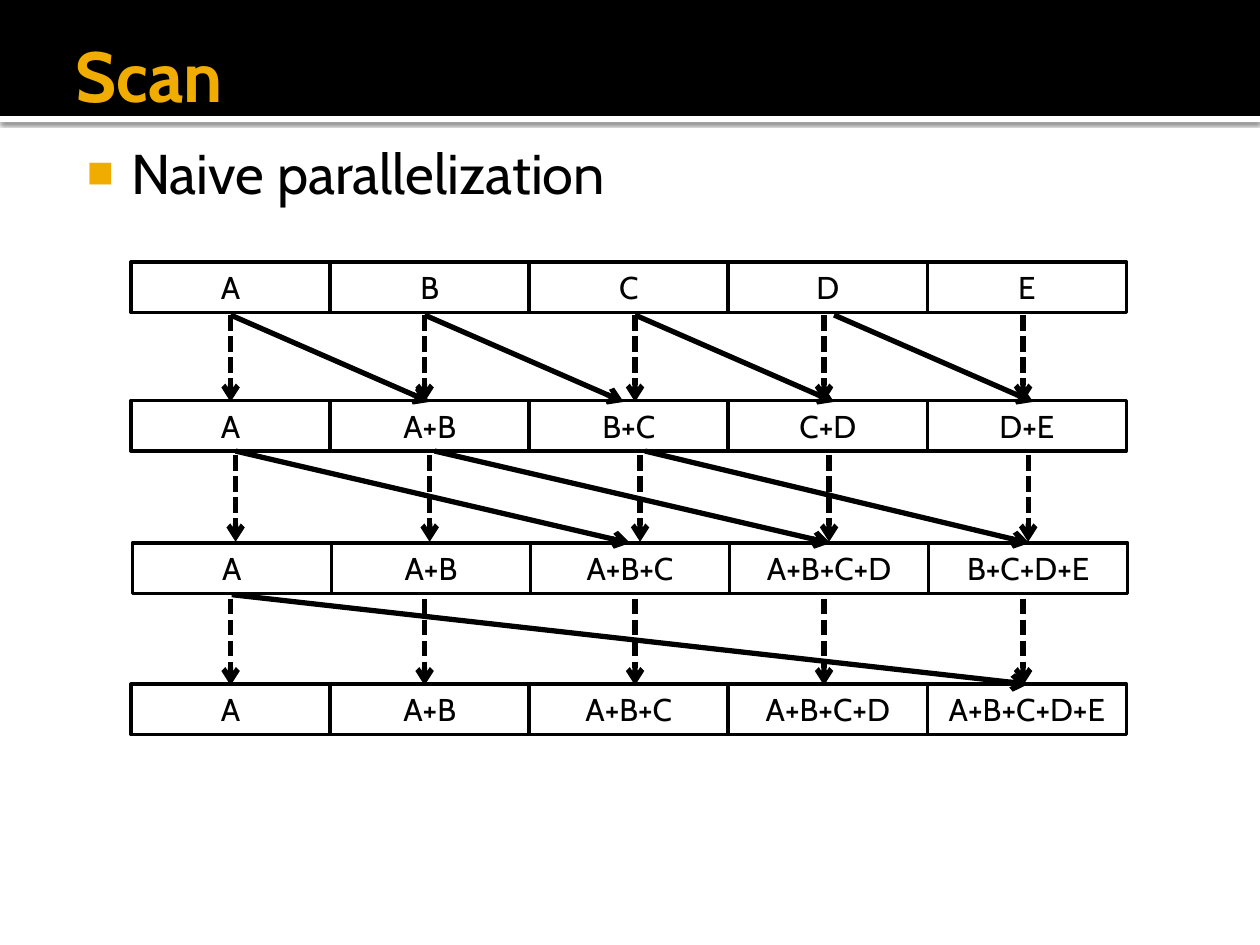
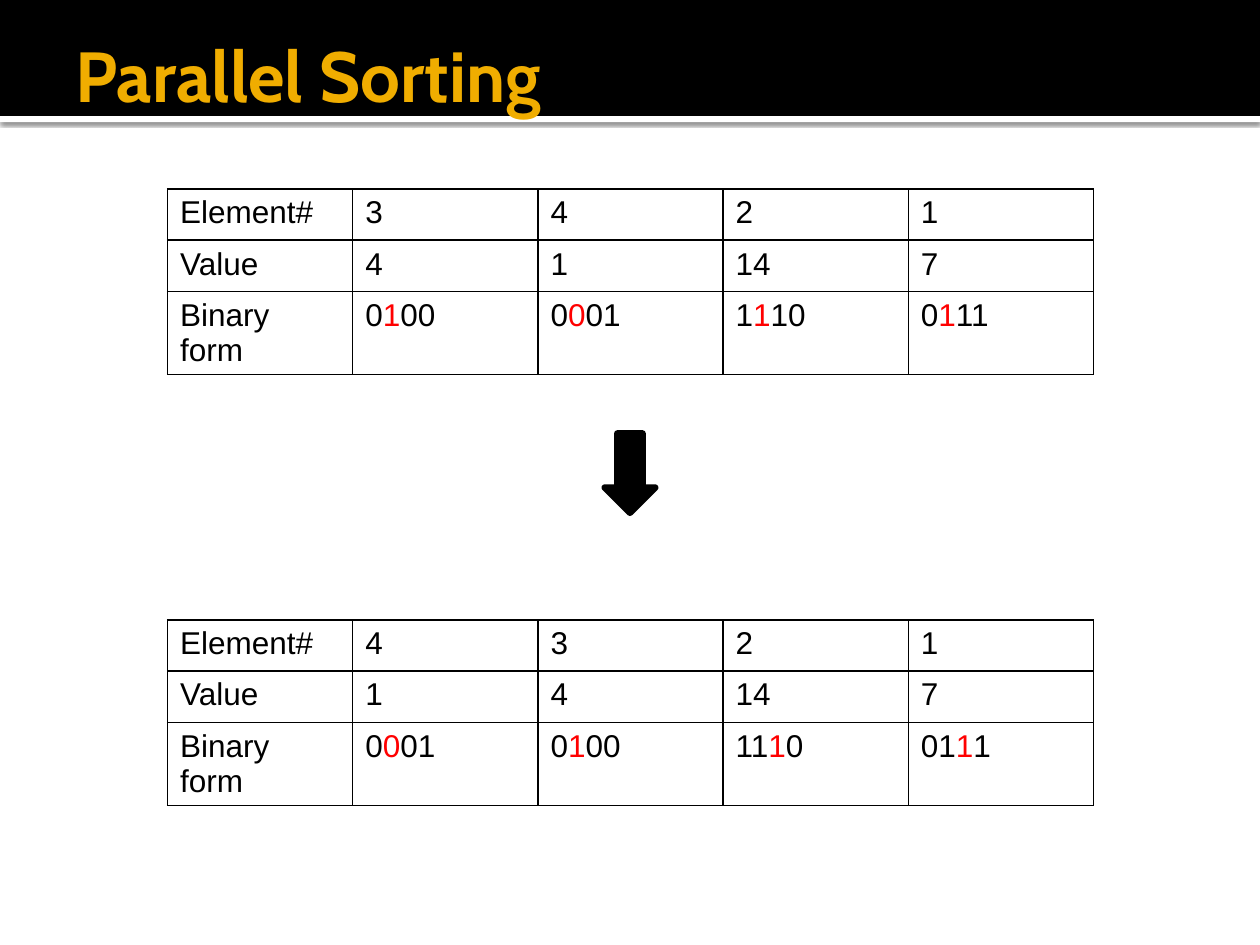
from dataclasses import dataclass

from pptx import Presentation
from pptx.dml.color import RGBColor
from pptx.enum.dml import MSO_LINE_DASH_STYLE as Dash
from pptx.enum.shapes import MSO_CONNECTOR as Connector, MSO_SHAPE as Shape
from pptx.enum.text import MSO_ANCHOR as Anchor, MSO_AUTO_SIZE as AutoSize, PP_ALIGN as Align
from pptx.oxml import parse_xml
from pptx.oxml.ns import nsdecls, qn
from pptx.util import Inches, Pt


@dataclass(frozen=True)
class Theme:
    black: str = "000000"
    white: str = "FFFFFF"
    accent: str = "F0AD00"
    marked: str = "FF0000"
    heading_font: str = "Cabin"
    table_font: str = "Arial"
    title_size: float = 40.5
    body_size: float = 32
    label_size: float = 18
    box_line: float = 2
    arrow_line: float = 3
    block_arrow_line: float = 3.78
    border: float = 1


THEME = Theme()
TITLE_AND_BODY, TITLE_ONLY = 1, 5

LETTERS = "ABCDE"
BOX_WIDTH, BOX_HEIGHT = 1.58, 0.4
ROW_ORIGINS = [(1.04, 2.08), (1.04, 3.18), (1.05, 4.31), (1.04, 5.43)]
KEEP_COLUMNS = [1.83, 3.37, 5.04, 6.54, 8.12]
KEEP_STARTS = [(0, 2.5), (0.04, 3.61), (0, 4.75)]  # column shift, top
KEEP_LENGTH = 0.69
# Top, bottom, and the start and end across for each addition of a step
ADD_STEPS = [
    (2.5, 3.19, [(1.83, 3.41), (3.37, 4.95), (5.04, 6.62), (6.62, 8.2)]),
    (3.58, 4.31, [(1.87, 5), (3.45, 6.59), (5.12, 8.17)]),
    (4.72, 5.43, [(1.84, 8.16)]),
]

# Digits between bars are the marked bit
BEFORE_SORT = [
    ["Element#", "3", "4", "2", "1"],
    ["Value", "4", "1", "14", "7"],
    ["Binary form", "0|1|00", "0|0|01", "1|1|10", "0|1|11"],
]
AFTER_SORT = [
    ["Element#", "4", "3", "2", "1"],
    ["Value", "1", "4", "14", "7"],
    ["Binary form", "0|0|01", "0|1|00", "11|1|0", "01|1|1"],
]


def color(code):
    return RGBColor.from_string(code)


def apply(target, values):
    for name, value in values.items():
        setattr(target, name, value)


def add_span(para, text, size, font, code=THEME.black, bold=False):
    span = para.add_run()
    span.text = text
    apply(span.font, {"size": Pt(size), "name": font, "bold": bold})
    span.font.color.rgb = color(code)


def place(shape, left, top, width, height):
    apply(shape, {"left": Inches(left), "top": Inches(top),
                  "width": Inches(width), "height": Inches(height)})


def set_frame(frame, insets, anchor):
    sides = ("margin_left", "margin_top", "margin_right", "margin_bottom")
    apply(frame, {side: Inches(inset) for side, inset in zip(sides, insets)})
    apply(frame, {"vertical_anchor": anchor, "word_wrap": True,
                  "auto_size": AutoSize.NONE})


def add_page(deck, layout, title):
    page = deck.slides.add_slide(deck.slide_layouts[layout])
    heading = page.shapes.title
    place(heading, 0.5, 0.17, 9, 0.83)
    set_frame(heading.text_frame, (0.1, 0.05, 0.05, 0.05), Anchor.MIDDLE)
    para = heading.text_frame.paragraphs[0]
    para.alignment = Align.LEFT
    add_span(para, title, THEME.title_size, THEME.heading_font, THEME.accent, bold=True)
    return page


def fill_body(page, text):
    body = page.placeholders[1]
    place(body, 0.5, 1, 9, 6)
    set_frame(body.text_frame, (0.06, 0.1, 0.1, 0.05), Anchor.TOP)
    para = body.text_frame.paragraphs[0]
    para.space_before = Pt(0)
    add_span(para, text, THEME.body_size, THEME.heading_font)
    props = para._p.get_or_add_pPr()
    props.set("marL", str(Inches(0.48)))
    props.set("indent", str(Inches(-0.35)))
    for markup in (
        f'<a:buClr {nsdecls("a")}><a:srgbClr val="{THEME.accent}"/></a:buClr>',
        f'<a:buSzPct {nsdecls("a")} val="80000"/>',
        f'<a:buFont {nsdecls("a")} typeface="{THEME.table_font}"/>',
        f'<a:buChar {nsdecls("a")} char="■"/>',
    ):
        props.append(parse_xml(markup))


def add_shape(shapes, kind, at, fill=None, line_width=None):
    shape = shapes.add_shape(kind, *map(Inches, at))
    shape.shadow.inherit = False
    if fill:
        shape.fill.solid()
        shape.fill.fore_color.rgb = color(fill)
    else:
        shape.fill.background()
    if line_width:
        shape.line.color.rgb = color(THEME.black)
        shape.line.width = Pt(line_width)
    else:
        shape.line.fill.background()
    return shape


def add_master_bands(deck):
    """Draw the title band and its shadowed edge, then move both to the master."""
    shapes = deck.slides[0].shapes
    edge = add_shape(shapes, Shape.RECTANGLE, (0, 0.92, 10, 0.05), THEME.white)
    band = add_shape(shapes, Shape.RECTANGLE, (0, 0, 10, 0.92), THEME.black)
    effects = edge.element.spPr.find(qn("a:effectLst"))
    effects.append(parse_xml(
        f'<a:outerShdw {nsdecls("a")} blurRad="{Pt(2.5)}" dist="{Pt(0.8)}" dir="5400000" '
        f'rotWithShape="0"><a:srgbClr val="{THEME.black}"><a:alpha val="60000"/>'
        '</a:srgbClr></a:outerShdw>'))
    tree = deck.slide_master.shapes.element
    for index, shape in enumerate((edge, band), start=2):
        tree.insert(index, shape.element)


def add_box_row(page, left, top, labels):
    row = page.shapes.add_group_shape()
    for column, label in enumerate(labels):
        at = (left + column * BOX_WIDTH, top, BOX_WIDTH, BOX_HEIGHT)
        box = add_shape(row.shapes, Shape.RECTANGLE, at, line_width=THEME.box_line)
        set_frame(box.text_frame, (0.1, 0.05, 0.1, 0.05), Anchor.MIDDLE)
        para = box.text_frame.paragraphs[0]
        para.alignment = Align.CENTER
        add_span(para, label, THEME.label_size, THEME.heading_font)


def add_arrow(page, start, end, dash=None):
    arrow = page.shapes.add_connector(Connector.STRAIGHT, *map(Inches, (*start, *end)))
    arrow.line.color.rgb = color(THEME.black)
    arrow.line.width = Pt(THEME.arrow_line)
    if dash:
        arrow.line.dash_style = dash
    props = arrow.element.spPr
    props.find(qn("a:ln")).append(parse_xml(f'<a:tailEnd {nsdecls("a")} type="arrow"/>'))
    props.append(parse_xml(f'<a:effectLst {nsdecls("a")}/>'))


def add_borders(cell):
    props = cell._tc.get_or_add_tcPr()
    for index, side in enumerate(("lnL", "lnR", "lnT", "lnB")):
        props.insert(index, parse_xml(
            f'<a:{side} {nsdecls("a")} w="{Pt(THEME.border)}"><a:solidFill>'
            f'<a:srgbClr val="{THEME.black}"/></a:solidFill></a:{side}>'))


def add_grid(page, top, rows):
    frame = page.shapes.add_table(len(rows), len(rows[0]), Inches(1.33), Inches(top),
                                  Inches(7.35), Inches(1.22))
    table = frame.table
    apply(table, {"first_row": False, "horz_banding": False})
    for row_index, texts in enumerate(rows):
        for column, text in enumerate(texts):
            cell = table.cell(row_index, column)
            cell.fill.background()
            add_borders(cell)
            para = cell.text_frame.paragraphs[0]
            for part, piece in enumerate(text.split("|")):
                code = THEME.marked if part % 2 else THEME.black
                add_span(para, piece, THEME.label_size, THEME.table_font, code)


def build_scan(deck):
    page = add_page(deck, TITLE_AND_BODY, "Scan")
    fill_body(page, "Naive parallelization")
    for step, (left, top) in enumerate(ROW_ORIGINS):
        reach = 2 ** step  # each step doubles how many letters a box sums
        labels = ["+".join(LETTERS[max(0, end - reach):end])
                  for end in range(1, len(LETTERS) + 1)]
        add_box_row(page, left, top, labels)
    for shift, top in KEEP_STARTS:
        for column in KEEP_COLUMNS:
            across = column + shift
            add_arrow(page, (across, top), (across, top + KEEP_LENGTH), Dash.SQUARE_DOT)
    for top, bottom, spans in ADD_STEPS:
        for start, end in spans:
            add_arrow(page, (start, top), (end, bottom))


def build_sorting(deck):
    page = add_page(deck, TITLE_ONLY, "Parallel Sorting")
    add_shape(page.shapes, Shape.DOWN_ARROW, (4.8, 3.44, 0.4, 0.63), THEME.black,
              THEME.block_arrow_line)
    add_grid(page, 1.5, BEFORE_SORT)
    add_grid(page, 4.92, AFTER_SORT)


def main():
    deck = Presentation()
    apply(deck, {"slide_width": Inches(10), "slide_height": Inches(7.5)})
    build_scan(deck)
    build_sorting(deck)
    add_master_bands(deck)
    deck.save("out.pptx")


if __name__ == "__main__":
    main()
